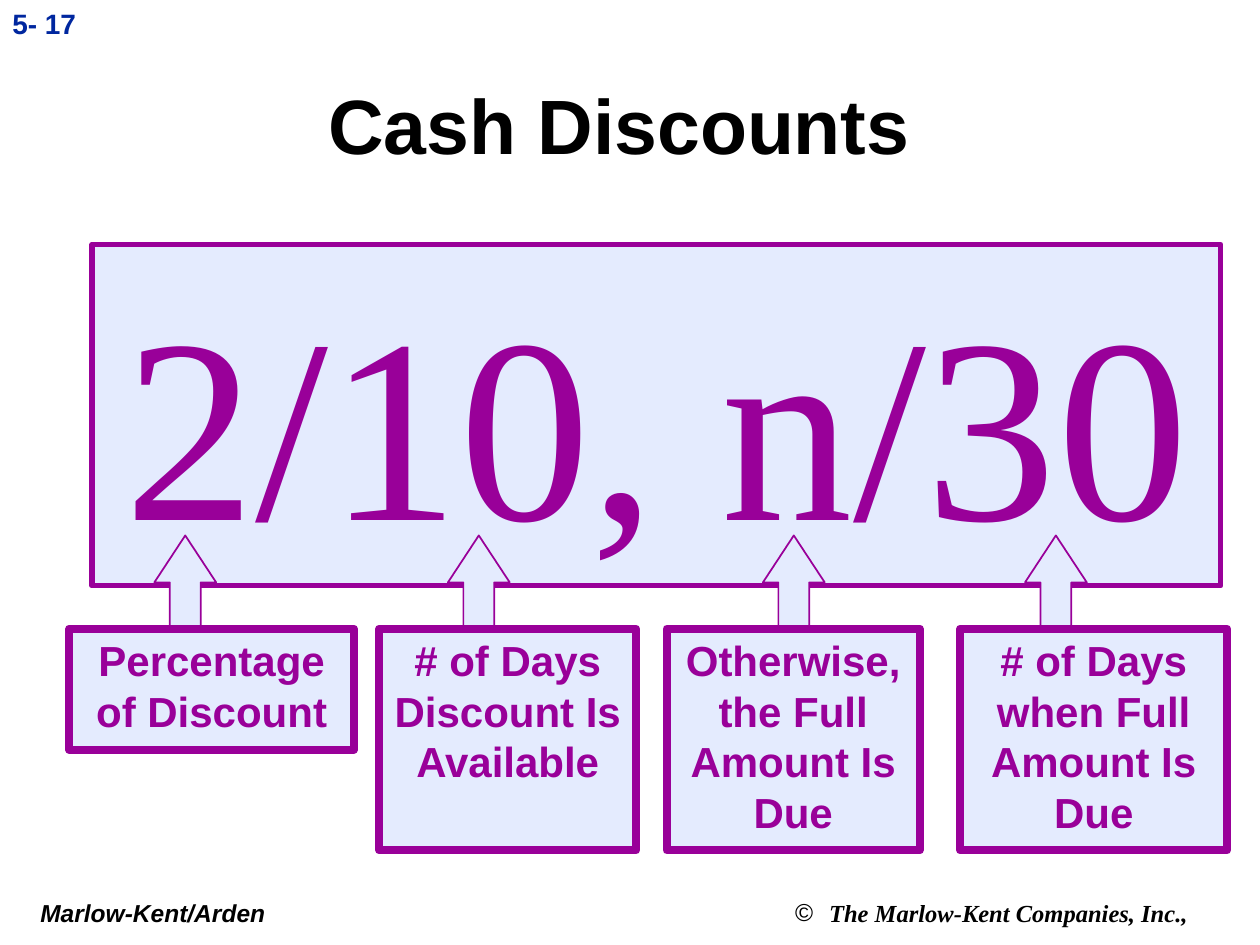
from dataclasses import dataclass

from lxml import etree
from pptx import Presentation
from pptx import util as u
from pptx.dml.color import RGBColor
from pptx.enum import shapes, text


@dataclass(frozen=True)
class Theme:
    accent: str = "990099"
    panel: str = "E4EBFE"
    number: str = "00279F"
    ink: str = "000000"
    sans: str = "Arial"
    serif: str = "Times New Roman"
    term_size: int = 150
    title_size: int = 44
    label_size: int = 24
    number_size: int = 16
    footer_size: int = 14


THEME = Theme()
WIDTH, HEIGHT = 10, 7.5
ARROW_WIDTH, ARROW_HEIGHT = 0.49, 0.74
LABEL_TOP = 4.99

# Label wording, left, width, height, and centre of the arrow above it
PARTS = [
    ("Percentage of Discount", 0.55, 2.26, 0.96, 1.47),
    ("# of Days Discount Is Available", 3.01, 2.04, 1.76, 3.8),
    ("Otherwise, the Full Amount Is Due", 5.29, 2.01, 1.76, 6.3),
    ("# of Days when Full Amount Is Due", 7.62, 2.12, 1.76, 8.38),
]


def write(shape, words, size, color=THEME.ink, font=THEME.sans, bold=True,
          italic=False, align=text.PP_ALIGN.CENTER,
          anchor=text.MSO_ANCHOR.TOP, wrap=True, inset=0.1):
    """Put one formatted paragraph in a shape and return the paragraph."""
    frame = shape.text_frame
    frame.word_wrap = wrap
    frame.vertical_anchor = anchor
    frame.margin_left = u.Inches(inset)
    para = frame.paragraphs[0]
    para.alignment = align
    span = para.add_run()
    span.text = words
    span.font.size = u.Pt(size)
    span.font.name = font
    span.font.bold = bold
    span.font.italic = italic
    span.font.color.rgb = RGBColor.from_string(color)
    return para


def add_text(page, box, words, size, **style):
    shape = page.shapes.add_textbox(*map(u.Inches, box))
    return write(shape, words, size, **style)


def add_panel(page, box, line_width, kind=shapes.MSO_SHAPE.RECTANGLE):
    panel = page.shapes.add_shape(kind, *map(u.Inches, box))
    panel.shadow.inherit = False
    panel.fill.solid()
    panel.fill.fore_color.rgb = RGBColor.from_string(THEME.panel)
    panel.line.color.rgb = RGBColor.from_string(THEME.accent)
    panel.line.width = u.Pt(line_width)
    return panel


def add_bullet(para, mark, indent):
    props = para._p.get_or_add_pPr()
    props.set("marL", str(u.Inches(indent)))
    props.set("indent", str(-u.Inches(indent)))
    namespace = props.nsmap["a"]
    etree.SubElement(props, f"{{{namespace}}}buFont", typeface=THEME.sans)
    etree.SubElement(props, f"{{{namespace}}}buChar", char=mark)


def add_header(page, box):
    left, top, width, height = box
    add_text(page, (left, top, width / 12, height / 3), "5- 17",
             THEME.number_size, color=THEME.number, wrap=False,
             align=text.PP_ALIGN.LEFT)
    add_text(page, (left + 0.58, top + 0.38, 8.67, 1.21), "Cash Discounts",
             THEME.title_size, anchor=text.MSO_ANCHOR.MIDDLE)


def add_terms(page, box):
    write(add_panel(page, box, 3), "2/10, n/30", THEME.term_size,
          color=THEME.accent, font=THEME.serif, bold=False, wrap=False,
          anchor=text.MSO_ANCHOR.MIDDLE)


def add_arrow(page, center, bottom):
    box = (center - ARROW_WIDTH / 2, bottom - ARROW_HEIGHT,
           ARROW_WIDTH, ARROW_HEIGHT)
    arrow = add_panel(page, box, 1, shapes.MSO_SHAPE.UP_ARROW)
    arrow.adjustments[0] = 0.5
    arrow.adjustments[1] = 0.76


def add_labels(page, top):
    for *_, center in PARTS:
        add_arrow(page, center, top)
    for words, left, width, height, _ in PARTS:
        label = add_panel(page, (left, top, width, height), 4.5)
        write(label, words, THEME.label_size, color=THEME.accent)


def add_footer(page, box):
    left, top, width, height = box
    add_text(page, (left, top, width / 4, height), "Marlow-Kent/Arden",
             THEME.footer_size, italic=True, align=text.PP_ALIGN.LEFT,
             inset=0.32)
    owner = add_text(page, (left + 5.83, top, 4.08, height),
                     "The Marlow-Kent Companies, Inc.,", THEME.footer_size,
                     font=THEME.serif, italic=True)
    add_bullet(owner, "©", 0.27)


def main():
    deck = Presentation()
    deck.slide_width, deck.slide_height = u.Inches(WIDTH), u.Inches(HEIGHT)
    page = deck.slides.add_slide(deck.slide_layouts[6])
    add_footer(page, (0, 7.08, WIDTH, 0.33))
    add_header(page, (0, 0, WIDTH, 1.5))
    add_terms(page, (0.73, 1.94, 8.96, 2.71))
    add_labels(page, LABEL_TOP)
    deck.save("out.pptx")


if __name__ == "__main__":
    main()
